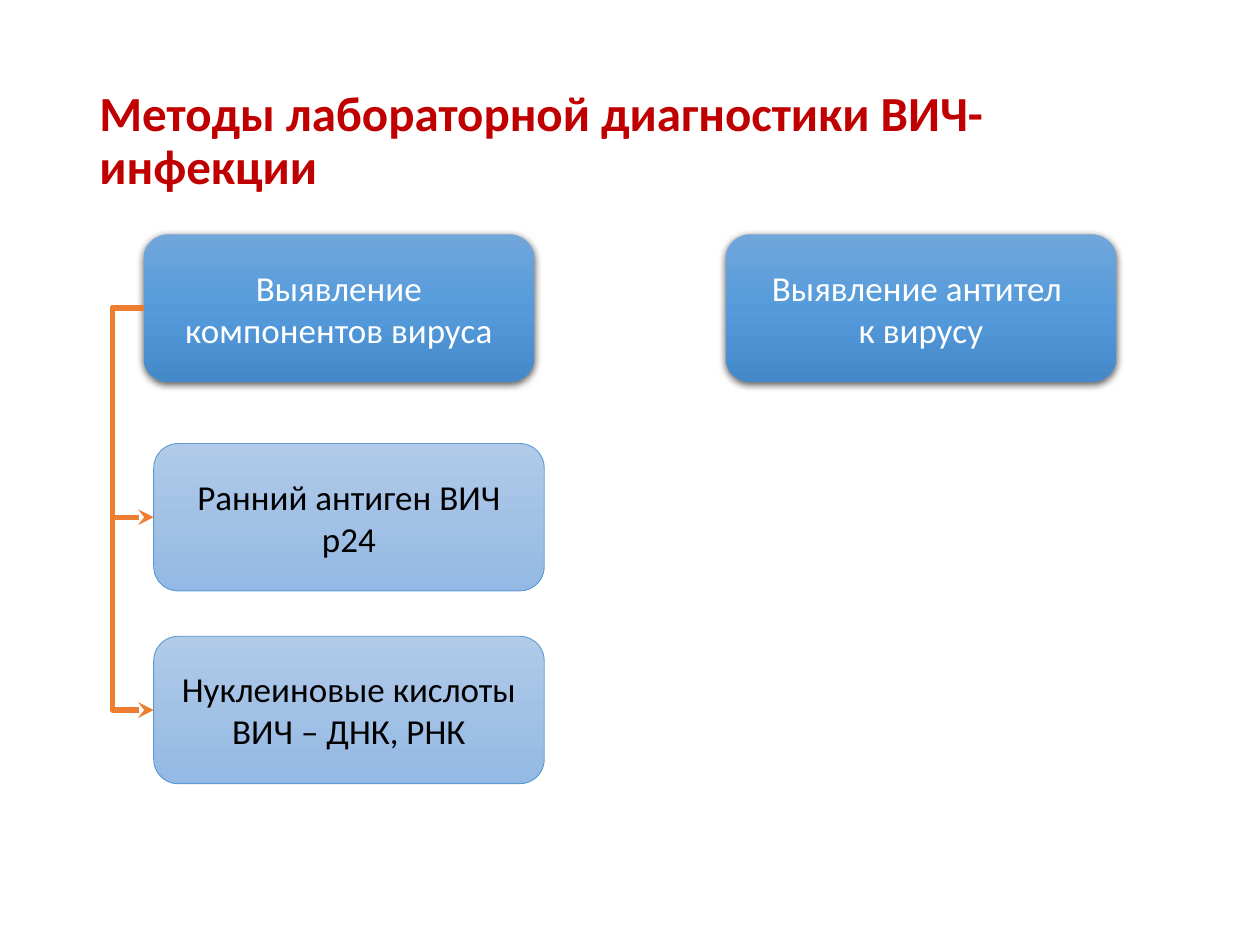
from copy import deepcopy
from dataclasses import dataclass
from typing import Optional

from lxml import etree
from pptx import Presentation
from pptx import util as u
from pptx.dml.color import RGBColor
from pptx.enum import shapes, text
from pptx.oxml import ns

RED = RGBColor(0xC0, 0x00, 0x00)
WHITE = RGBColor(0xFF, 0xFF, 0xFF)
BLACK = RGBColor(0x00, 0x00, 0x00)
BLUE = RGBColor(0x5B, 0x9B, 0xD5)
ORANGE = RGBColor(0xED, 0x7D, 0x31)
STRONG = (RGBColor(0x71, 0xA6, 0xDB), RGBColor(0x55, 0x9B, 0xDB), RGBColor(0x44, 0x8A, 0xCA))
PALE = (RGBColor(0xB1, 0xCB, 0xE9), RGBColor(0xA3, 0xC1, 0xE5), RGBColor(0x93, 0xB9, 0xE4))

BOX_W, BOX_H = u.Inches(3.1), u.Inches(1.17)
ELBOW_OUT = u.Inches(0.25)  # how far the connectors swing out to the left


@dataclass
class Style:
    gradient: tuple
    color: RGBColor
    line: Optional[RGBColor] = None
    shadow: bool = False


@dataclass
class Box:
    left: float
    top: float
    lines: tuple
    style: Style


METHOD = Style(STRONG, WHITE, shadow=True)
TARGET = Style(PALE, BLACK, line=BLUE)

METHODS = (
    Box(1.14, 1.86, ("Выявление компонентов вируса",), METHOD),
    Box(5.76, 1.86, ("Выявление антител ", "к вирусу"), METHOD),
)
TARGETS = (
    Box(1.22, 3.52, ("Ранний антиген ВИЧ р24",), TARGET),
    Box(1.22, 5.05, ("Нуклеиновые кислоты ВИЧ – ДНК, РНК",), TARGET),
)


def write(s, lines, *, size, color, bold=False, align=None, spacing=None) -> None:
    tf = s.text_frame
    tf.word_wrap = True
    tf.vertical_anchor = text.MSO_ANCHOR.MIDDLE
    for i, line in enumerate(lines):
        p = tf.add_paragraph() if i else tf.paragraphs[0]
        p.alignment = align
        p.line_spacing = spacing
        r = p.add_run()
        r.text = line
        r.font.name = "Calibri"
        r.font.size = u.Pt(size)
        r.font.bold = bold
        r.font.color.rgb = color


def fill_gradient(s, colors) -> None:
    s.fill.gradient()
    s.fill.gradient_angle = 270
    stops = s._element.spPr.find(".//" + ns.qn("a:gsLst"))
    stops.insert(1, deepcopy(stops[0]))  # middle stop
    for stop, color, position in zip(s.fill.gradient_stops, colors, (0, 0.5, 1)):
        stop.color.rgb = color
        stop.position = position


def add_shadow(s) -> None:
    effects = s._element.spPr.find(ns.qn("a:effectLst"))
    shadow = etree.SubElement(effects, ns.qn("a:outerShdw"), blurRad=str(u.Pt(4.5)),
                              dist=str(u.Pt(1.5)), dir="5400000", algn="ctr", rotWithShape="0")
    color = etree.SubElement(shadow, ns.qn("a:srgbClr"), val="000000")
    etree.SubElement(color, ns.qn("a:alpha"), val="63000")


def add_box(slide, box: Box):
    s = slide.shapes.add_shape(shapes.MSO_SHAPE.ROUNDED_RECTANGLE,
                               u.Inches(box.left), u.Inches(box.top), BOX_W, BOX_H)
    s.shadow.inherit = False
    fill_gradient(s, box.style.gradient)
    if box.style.line is None:
        s.line.fill.background()
    else:
        s.line.color.rgb = box.style.line
        s.line.width = u.Pt(0.5)
    if box.style.shadow:
        add_shadow(s)
    write(s, box.lines, size=20, color=box.style.color, align=text.PP_ALIGN.CENTER)
    return s


def add_elbow(slide, start, end) -> None:
    """Arrow from the left side of start round to the left side of end."""
    c = slide.shapes.add_connector(shapes.MSO_CONNECTOR.ELBOW,
                                   start.left, start.top + start.height // 2,
                                   end.left, end.top + end.height // 2)
    c.begin_connect(start, 1)
    c.end_connect(end, 1)
    c.line.color.rgb = ORANGE
    c.line.width = u.Pt(3)
    etree.SubElement(c.line._get_or_add_ln(), ns.qn("a:tailEnd"), type="stealth")
    spPr = c._element.spPr
    etree.SubElement(spPr, ns.qn("a:effectLst"))
    geometry = spPr.find(ns.qn("a:prstGeom"))
    guides = geometry.find(ns.qn("a:avLst"))
    if guides is None:
        guides = etree.SubElement(geometry, ns.qn("a:avLst"))
    bend = round(-100000 * ELBOW_OUT / c.width)
    etree.SubElement(guides, ns.qn("a:gd"), name="adj1", fmla=f"val {bend}")


def main() -> None:
    prs = Presentation()
    prs.slide_width, prs.slide_height = u.Inches(10), u.Inches(7.5)
    slide = prs.slides.add_slide(prs.slide_layouts[6])

    # Title
    title = slide.shapes.add_textbox(u.Inches(0.69), u.Inches(0.4), u.Inches(8.62), u.Inches(1.45))
    write(title, ("Методы лабораторной диагностики ВИЧ-инфекции",),
          size=28, color=RED, bold=True, spacing=0.9)

    # Methods and what they detect
    methods = [add_box(slide, box) for box in METHODS]
    targets = [add_box(slide, box) for box in TARGETS]

    # Arrows from the first method to its targets
    for target in targets:
        add_elbow(slide, methods[0], target)

    prs.save("out.pptx")


if __name__ == "__main__":
    main()
